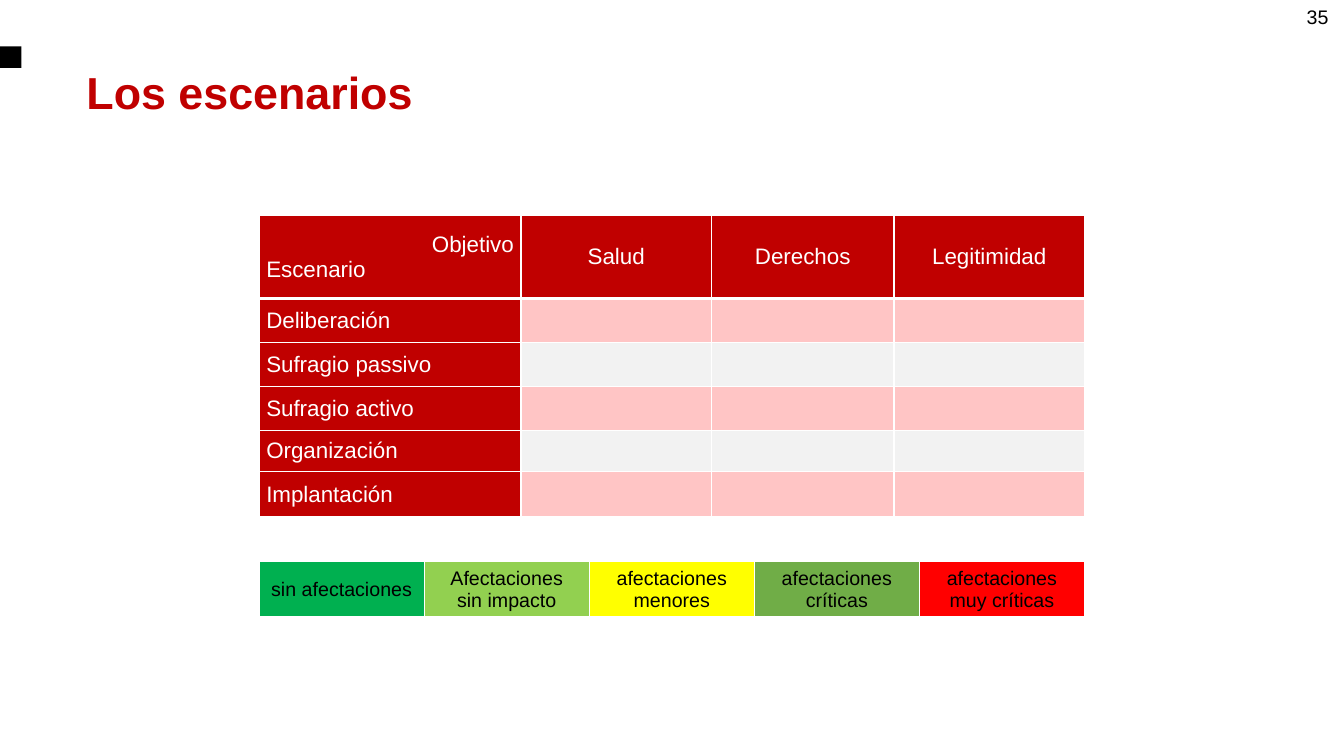
import pptx
import pptx.util
import pptx.dml.color
import pptx.enum.shapes
import pptx.enum.text
import pptx.oxml
import pptx.oxml.ns

Cm, Pt = pptx.util.Cm, pptx.util.Pt
Align = pptx.enum.text.PP_ALIGN
Anchor = pptx.enum.text.MSO_ANCHOR
RED, PINK, GREY, WHITE, BLACK = "C00000", "FFC5C5", "F2F2F2", "FFFFFF", "000000"


def paint(target, tint):
    """Set a solid fill or a font colour from a hex string."""
    if hasattr(target, "solid"):
        target.solid()
        target = target.fore_color
    else:
        target = target.color
    target.rgb = pptx.dml.color.RGBColor.from_string(tint)


def write(frame, lines, tint, size, bold=False):
    """Write (text, alignment) lines as paragraphs."""
    for n, (text, align) in enumerate(lines):
        para = frame.paragraphs[0] if n == 0 else frame.add_paragraph()
        para.text, para.alignment = text, align
        look = {"name": "Arial", "size": Pt(size), "bold": bold}
        for key, value in look.items():
            setattr(para.font, key, value)
        paint(para.font, tint)


deck = pptx.Presentation()
deck.slide_width, deck.slide_height = Cm(33.87), Cm(19.05)
slide = deck.slides.add_slide(deck.slide_layouts[6])
shapes = slide.shapes

# Black marker at the left edge
mark = shapes.add_shape(pptx.enum.shapes.MSO_SHAPE.RECTANGLE,
                        0, Cm(1.17), Cm(0.54), Cm(0.54))
mark.shadow.inherit = False
mark.line.fill.background()
paint(mark.fill, BLACK)

# Title and page number
for text, spot, size, tint, bold, align, anchor in [
    ("Los escenarios", (1.93, 1.42, 27.7, 1.7), 32, RED, True, Align.LEFT, Anchor.BOTTOM),
    ("35", (32.33, 0, 1.4, 1.02), 14, BLACK, False, Align.RIGHT, Anchor.TOP),
]:
    box = shapes.add_textbox(*[Cm(v) for v in spot]).text_frame
    box.word_wrap, box.vertical_anchor = True, anchor
    write(box, [(text, align)], tint, size, bold)

# Cell contents: (lines, fill)
corner = [("Objetivo", Align.RIGHT), ("Escenario", Align.JUSTIFY)]
goals = ["Salud", "Derechos", "Legitimidad"]
cases = ["Deliberación", "Sufragio passivo", "Sufragio activo",
         "Organización", "Implantación"]
levels = [("sin afectaciones", "00B050"), ("Afectaciones\nsin impacto", "92D050"),
          ("afectaciones menores", "FFFF00"), ("afectaciones críticas", "70AD47"),
          ("afectaciones muy críticas", "FF0000")]

matrix = [[(corner, RED)] + [([(goal, Align.CENTER)], RED) for goal in goals]]
for n, case in enumerate(cases):
    blank = ([("", Align.CENTER)], GREY if n % 2 else PINK)
    matrix.append([([(case, Align.JUSTIFY)], RED)] + [blank] * len(goals))
legend = [[([(line, Align.CENTER) for line in text.split("\n")], tint)
           for text, tint in levels]]

# Scenario matrix and colour legend
for cells, top, wide, high, tint, size in [
    (matrix, 5.44, [6.6, 4.8, 4.6, 4.8], [2.08, 1.12, 1.09, 1.12, 1.04, 1.14], WHITE, 16),
    (legend, 14.15, [4.16] * 5, [1.42], BLACK, 14),
]:
    table = shapes.add_table(len(high), len(wide), Cm(6.53), Cm(top),
                             Cm(sum(wide)), Cm(sum(high))).table
    for col, value in zip(table.columns, wide):
        col.width = Cm(value)
    for row, value in zip(table.rows, high):
        row.height = Cm(value)
    for r, row in enumerate(cells):
        for c, (lines, fill) in enumerate(row):
            cell = table.cell(r, c)
            form = {"margin_left": Cm(0.18), "margin_right": Cm(0.18), "margin_top": 0,
                    "margin_bottom": 0, "vertical_anchor": Anchor.MIDDLE}
            for key, value in form.items():
                setattr(cell, key, value)
            write(cell.text_frame, lines, tint, size)
            paint(cell.fill, fill)
            # White borders, thicker below the first row
            props = cell._tc.get_or_add_tcPr()
            for n, side in enumerate("LRTB"):
                thick = Pt(3 if side == "B" and r == 0 else 1)
                props.insert(n, pptx.oxml.parse_xml(
                    f'<a:ln{side} {pptx.oxml.ns.nsdecls("a")} w="{thick}"><a:solidFill>'
                    f'<a:srgbClr val="{WHITE}"/></a:solidFill></a:ln{side}>'))

deck.save("out.pptx")
